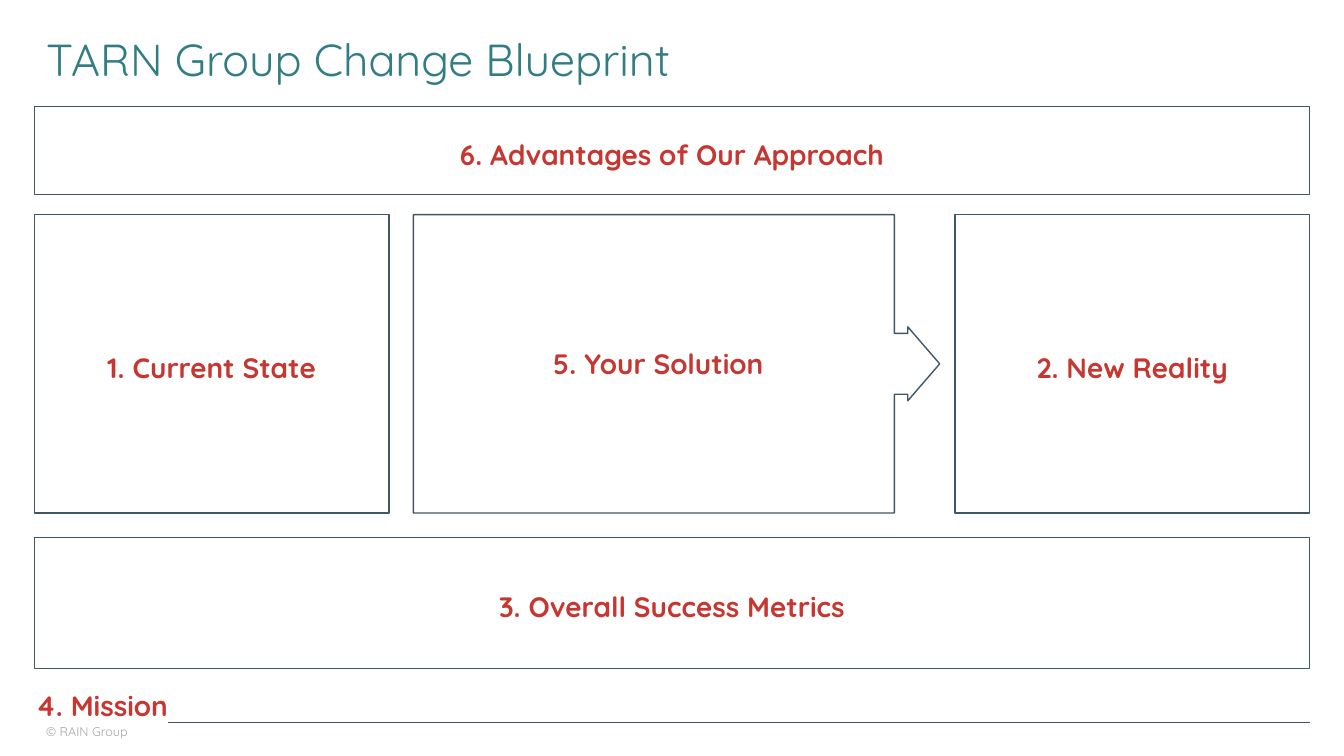
from pptx import Presentation
from pptx.dml.color import RGBColor
from pptx.enum import shapes, text
from pptx.oxml import parse_xml
from pptx.oxml.ns import nsdecls
from pptx.util import Inches, Pt

TEAL = RGBColor(0x31, 0x7D, 0x83)
RED = RGBColor(0xC6, 0x37, 0x31)
SLATE = RGBColor(0x40, 0x57, 0x66)
GREY = RGBColor(0xA5, 0xA5, 0xA5)
FONT = "Quicksand"

TITLE = "TARN Group Change Blueprint"
COPYRIGHT = "© RAIN Group"
MISSION = "4. Mission"
SOLUTION = "5. Your Solution"

LEFT, RIGHT = 0.34, 12.99
FULL_WIDTH = RIGHT - LEFT
STATE_WIDTH = 3.52
MIDDLE_TOP, MIDDLE_HEIGHT = 2.13, 2.96

# label, left, top, width, height
BOXES = [
    ("6. Advantages of Our Approach", LEFT, 1.06, FULL_WIDTH, 0.87),
    ("1. Current State", LEFT, MIDDLE_TOP, STATE_WIDTH, MIDDLE_HEIGHT),
    ("2. New Reality", RIGHT - STATE_WIDTH, MIDDLE_TOP, STATE_WIDTH, MIDDLE_HEIGHT),
    ("3. Overall Success Metrics", LEFT, 5.33, FULL_WIDTH, 1.3),
]
CALLOUT_ADJUSTMENTS = (0.204, 0.124, 0.107, 0.914)


def write(shape, words, size=20, color=RED, bold=True, align=text.PP_ALIGN.LEFT,
          anchor=text.MSO_ANCHOR.TOP, spacing=1.0, inset_top=0.05):
    frame = shape.text_frame
    frame.word_wrap = True
    frame.vertical_anchor = anchor
    frame.margin_top = Inches(inset_top)
    paragraph = frame.paragraphs[0]
    paragraph.alignment = align
    paragraph.line_spacing = spacing
    run = paragraph.add_run()
    run.text = words
    run.font.name = FONT
    run.font.size = Pt(size)
    run.font.bold = bold
    run.font.color.rgb = color


def add_text(slide, words, left, top, width, height, **style):
    box = slide.shapes.add_textbox(Inches(left), Inches(top), Inches(width), Inches(height))
    write(box, words, **style)


def add_outline(slide, kind, left, top, width, height):
    shape = slide.shapes.add_shape(kind, Inches(left), Inches(top), Inches(width), Inches(height))
    shape.shadow.inherit = False
    shape.fill.background()
    shape.line.color.rgb = SLATE
    shape.line.width = Pt(1)
    return shape


def add_mission_line(slide, left, right, y):
    line = slide.shapes.add_connector(
        shapes.MSO_CONNECTOR.STRAIGHT, Inches(left), Inches(y), Inches(right), Inches(y))
    line.line.color.rgb = SLATE
    line.line.width = Pt(0.5)
    line._element.spPr.append(parse_xml(f"<a:effectLst {nsdecls('a')}/>"))


def main():
    presentation = Presentation()
    presentation.slide_width = Inches(13.33)
    presentation.slide_height = Inches(7.5)
    slide = presentation.slides.add_slide(presentation.slide_layouts[6])

    add_text(slide, COPYRIGHT, 0.36, 7.06, 1.08, 0.37,
             size=9, color=GREY, bold=False, spacing=1.5)
    add_text(slide, TITLE, 0.36, 0.16, 12.18, 0.91, size=32, color=TEAL,
             bold=False, anchor=text.MSO_ANCHOR.MIDDLE, spacing=0.9)
    add_text(slide, MISSION, 0.26, 6.78, 4.43, 0.44)
    add_mission_line(slide, 1.67, RIGHT, 7.17)

    for label, *place in BOXES:
        box = add_outline(slide, shapes.MSO_SHAPE.RECTANGLE, *place)
        write(box, label, align=text.PP_ALIGN.CENTER,
              anchor=text.MSO_ANCHOR.MIDDLE, inset_top=0.12)

    callout = add_outline(slide, shapes.MSO_SHAPE.RIGHT_ARROW_CALLOUT,
                          4.1, MIDDLE_TOP, 5.22, MIDDLE_HEIGHT)
    for index, value in enumerate(CALLOUT_ADJUSTMENTS):
        callout.adjustments[index] = value
    add_text(slide, SOLUTION, 4.52, 3.39, 4.02, 0.44, align=text.PP_ALIGN.CENTER)

    presentation.save("out.pptx")


if __name__ == "__main__":
    main()
